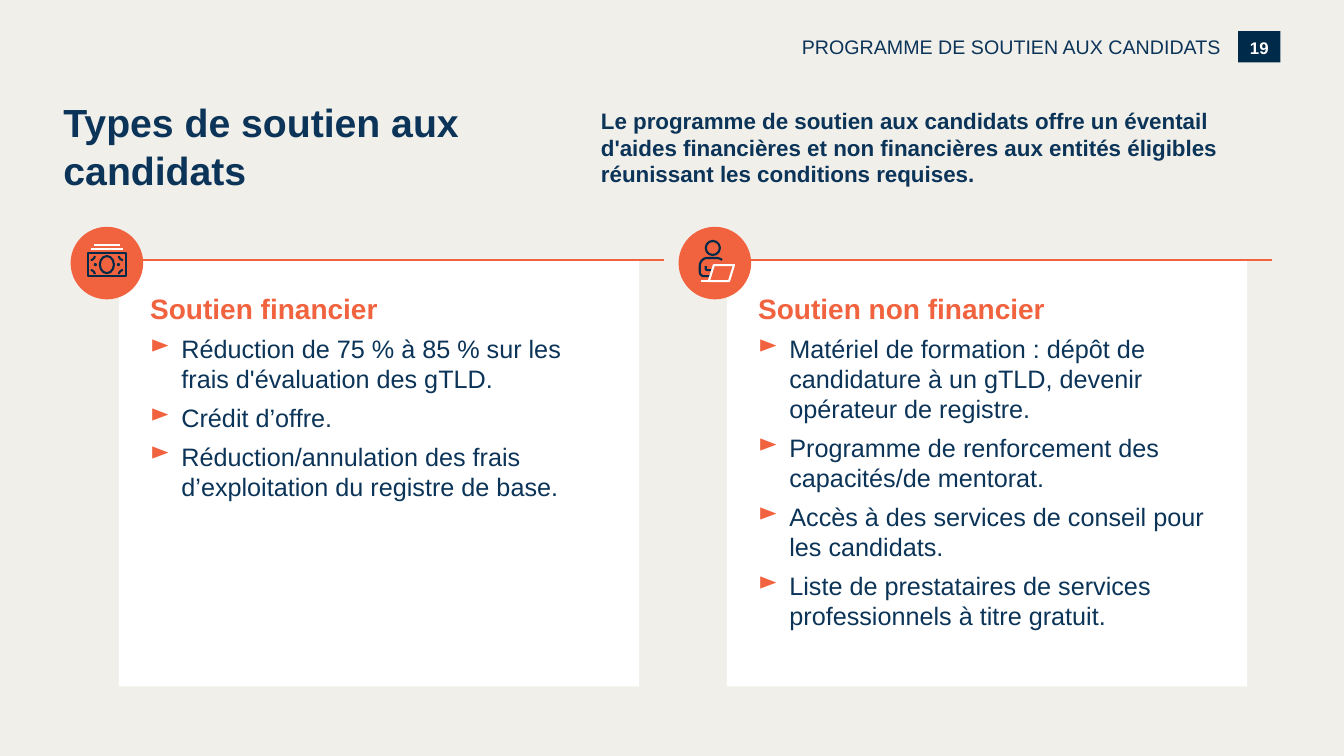
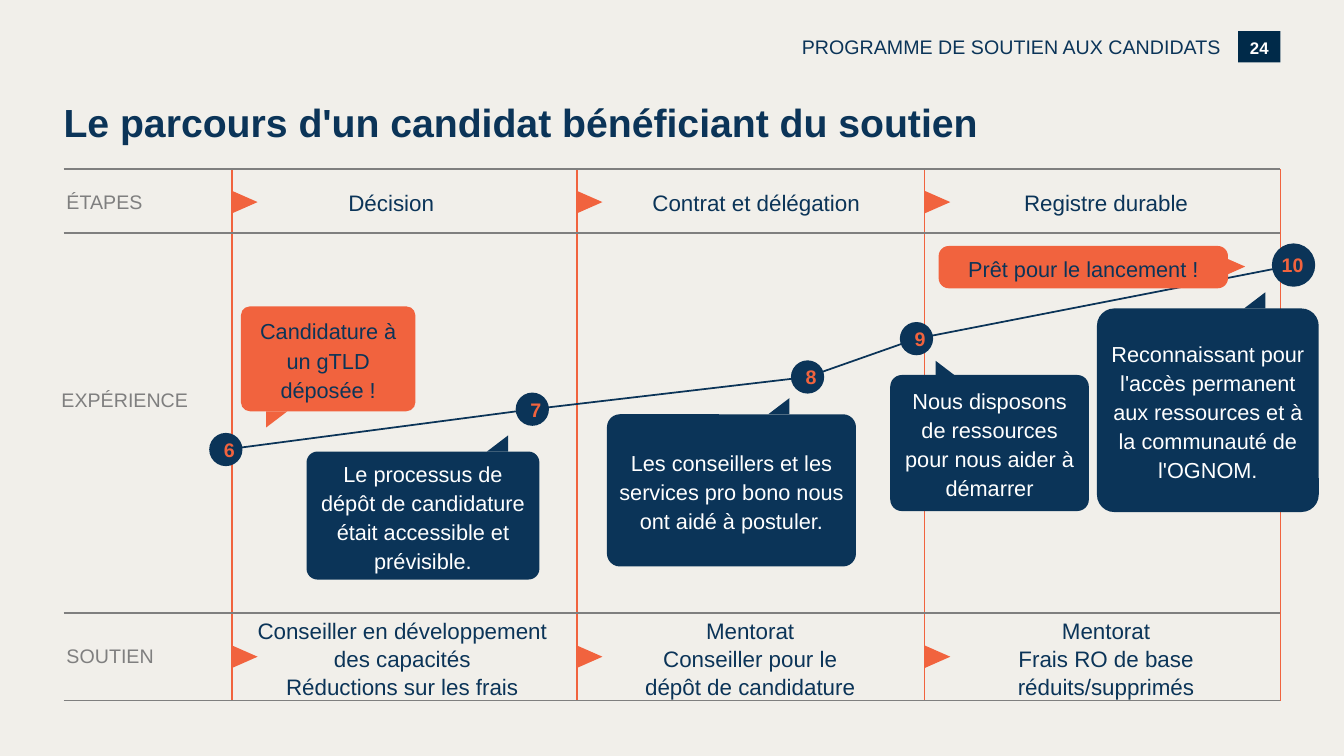
from lxml import etree
from pptx import Presentation
from pptx.dml.color import RGBColor
from pptx.enum.shapes import MSO_CONNECTOR, MSO_SHAPE
from pptx.enum.text import MSO_ANCHOR, PP_ALIGN
from pptx.oxml.ns import qn
from pptx.util import Pt

PX = 9144  # 100 px to the inch
FONT = "Arial"
SAND = RGBColor(0xF1, 0xEF, 0xEA)
NAVY = RGBColor(0x0B, 0x34, 0x58)
DEEP = RGBColor(0x00, 0x2A, 0x49)
ORANGE = RGBColor(0xF1, 0x63, 0x3E)
GREY = RGBColor(0x7F, 0x7F, 0x7F)
WHITE = RGBColor(0xFF, 0xFF, 0xFF)

RECT, ROUNDED, OVAL = MSO_SHAPE.RECTANGLE, MSO_SHAPE.ROUNDED_RECTANGLE, MSO_SHAPE.OVAL
ARROW, TAIL = MSO_SHAPE.ISOSCELES_TRIANGLE, MSO_SHAPE.RIGHT_TRIANGLE
LEFT, CENTER, RIGHT = PP_ALIGN.LEFT, PP_ALIGN.CENTER, PP_ALIGN.RIGHT
TOP, MIDDLE = MSO_ANCHOR.TOP, MSO_ANCHOR.MIDDLE
STRAIGHT = MSO_CONNECTOR.STRAIGHT

# ---- content ----
SECTION = "PROGRAMME DE SOUTIEN AUX CANDIDATS"
TYPES_TITLE = "Types de soutien aux candidats"
TYPES_INTRO = ("Le programme de soutien aux candidats offre un éventail d'aides financières "
               "et non financières aux entités éligibles réunissant les conditions requises.")
CARDS = [
    ("Soutien financier", [
        "Réduction de 75 % à 85 % sur les frais d'évaluation des gTLD.",
        "Crédit d’offre.",
        "Réduction/annulation des frais d’exploitation du registre de base."]),
    ("Soutien non financier", [
        "Matériel de formation : dépôt de candidature à un gTLD, devenir opérateur de registre.",
        "Programme de renforcement des capacités/de mentorat.",
        "Accès à des services de conseil pour les candidats.",
        "Liste de prestataires de services professionnels à titre gratuit."]),
]
JOURNEY_TITLE = "Le parcours d'un candidat bénéficiant du soutien"
ROW_LABELS = [("ÉTAPES", 66, 188), ("EXPÉRIENCE", 61, 385), ("SOUTIEN", 66, 639)]
STAGES = [  # stage, centre of its name, support, left and width of support
    ("Décision", 388, ["Conseiller en développement", "des capacités",
                       "Réductions sur les frais"], 226, 346),
    ("Contrat et délégation", 750, ["Mentorat", "Conseiller pour le",
                                    "dépôt de candidature"], 572, 344),
    ("Registre durable", 1097, ["Mentorat", "Frais RO de base réduits/supprimés"], 925, 344),
]
STEPS = [  # number, centre x, centre y, diameter, insets
    ("6", 224, 446, 33, (10, 5, 10, 5)), ("7", 528, 406, 33, (10, 5, 10, 5)),
    ("8", 801, 374, 33, (10, 5, 10, 5)), ("9", 909, 336, 33, (10, 5, 10, 5)),
    ("10", 1283, 263, 43, (0, 0, 2, 0)),
]
CALLOUTS = [  # text, box, fill, text colour, tail left and top, tail mirrored, tail rotation
    ("Candidature à un gTLD déposée !", (239, 304, 173, 104), ORANGE, NAVY,
     (264, 408), True, 180),
    ("Le processus de dépôt de candidature était accessible et prévisible.",
     (304, 448, 231, 127), NAVY, WHITE, (483, 432), True, 0),
    ("Les conseillers et les services pro bono nous ont aidé à postuler.",
     (602, 411, 247, 151), NAVY, WHITE, (762, 395), True, 0),
    ("Nous disposons de ressources pour nous aider à démarrer",
     (883, 372, 197, 135), NAVY, WHITE, (928, 358), False, 0),
    ("Reconnaissant pour l'accès permanent aux ressources et à la communauté de l'OGNOM.",
     (1088, 306, 220, 202), NAVY, WHITE, (1234, 290), True, 0),
]
LAUNCH = "Prêt pour le lancement !"

# ---- layout ----
MARGIN, RIGHT_EDGE = 63, 1270
CARD_LEFT, CARD_TOP, CARD_W, CARD_H, CARD_STEP = 118, 258, 516, 423, 603
COLUMN_EDGES = [230, 572, 917, RIGHT_EDGE]
ROW_EDGES = [168, 231, 608, 695]

# Icon outlines inside the 72 px badge: a pair is a corner, six numbers a Bézier curve
BODY = [(43, 33), (42, 32, 40, 31, 38, 31), (28, 31), (24, 31, 21, 35, 21, 39),
        (21, 45), (21, 47, 23, 49, 25, 49), (32, 49)]
ELBOW = [(33, 43), (28, 43), (27, 42), (27, 39)]
LAPTOP = [(35, 38), (30, 54), (50, 54), (55, 38)]


def emu(*lengths):
    return [round(length * PX) for length in lengths]


def shape(slide, kind, box, fill=None, line=None, rotation=0):
    item = slide.shapes.add_shape(kind, *emu(*box))
    paint(item, fill, line)
    item.rotation = rotation
    return item


def paint(item, fill, line):
    item.shadow.inherit = False
    if fill is None:
        item.fill.background()
    else:
        item.fill.solid()
        item.fill.fore_color.rgb = fill
    if line is None:
        item.line.fill.background()
    else:
        item.line.color.rgb = line
        item.line.width = Pt(1.5)


def rule(slide, x1, y1, x2, y2, color, width=1.25):
    line = slide.shapes.add_connector(STRAIGHT, *emu(x1, y1, x2, y2))
    line.line.color.rgb = color
    line.line.width = Pt(width)
    etree.SubElement(line._element.spPr, qn("a:effectLst"))


def style(paragraph, size, color, bold=False, align=LEFT, spacing=None):
    paragraph.alignment = align
    if spacing:
        paragraph.line_spacing = spacing
    font = paragraph.font
    font.name, font.size, font.bold = FONT, Pt(size), bold
    font.color.rgb = color


def write(item, lines, size, color, bold=False, align=LEFT, anchor=TOP,
          insets=(0, 0, 0, 0), spacing=None):
    frame = item.text_frame
    frame.word_wrap = True
    frame.vertical_anchor = anchor
    (frame.margin_left, frame.margin_top,
     frame.margin_right, frame.margin_bottom) = emu(*insets)
    for i, line in enumerate(lines):
        paragraph = frame.paragraphs[0] if i == 0 else frame.add_paragraph()
        paragraph.text = line
        style(paragraph, size, color, bold, align, spacing)


def label(slide, box, lines, size, color, **options):
    write(slide.shapes.add_textbox(*emu(*box)), lines, size, color, **options)


def add_bullet(frame, text):
    paragraph = frame.add_paragraph()
    paragraph.text = text
    paragraph.space_before = Pt(6)
    props = paragraph._p.get_or_add_pPr()
    props.set("marL", str(31 * PX))
    props.set("indent", str(-35 * PX))
    color = etree.SubElement(props, qn("a:buClr"))
    etree.SubElement(color, qn("a:srgbClr")).set("val", str(ORANGE))
    etree.SubElement(props, qn("a:buChar")).set("char", "►")
    style(paragraph, 18, NAVY)


def outline(slide, x, y, path, color, close=False):
    """Stroke a path of corners and Bézier curves, offset by x and y."""
    points = [path[0]]
    for part in path[1:]:
        if len(part) == 2:
            points.append(part)
            continue
        ctrl = [points[-1], part[:2], part[2:4], part[4:]]
        for t in (k / 8 for k in range(1, 9)):
            weights = ((1 - t) ** 3, 3 * t * (1 - t) ** 2, 3 * t * t * (1 - t), t ** 3)
            points.append(tuple(sum(w * c[axis] for w, c in zip(weights, ctrl))
                                for axis in (0, 1)))
    points = [emu(x + px, y + py) for px, py in points]
    builder = slide.shapes.build_freeform(*points[0], scale=1.0)
    builder.add_line_segments(points[1:], close=close)
    paint(builder.convert_to_shape(), None, color)


def banknote_icon(slide, x, y):
    shape(slide, RECT, (x + 17, y + 26, 38, 23), line=DEEP)
    shape(slide, OVAL, (x + 29, y + 29, 14, 17), line=DEEP)
    for dot in (24, 47):
        shape(slide, OVAL, (x + dot, y + 37, 1, 1), line=DEEP)
    for sx in (-1, 1):
        for sy in (-1, 1):
            corner = [(16 * sx, 5 * sy), (14 * sx, 5 * sy, 12 * sx, 7 * sy, 12 * sx, 9 * sy)]
            outline(slide, x + 36, y + 38, corner, DEEP)
    rule(slide, x + 20, y + 22, x + 52, y + 22, WHITE, 1.5)
    rule(slide, x + 23, y + 18, x + 49, y + 18, WHITE, 1.5)


def adviser_icon(slide, x, y):
    shape(slide, OVAL, (x + 27, y + 14, 14, 14), line=DEEP)
    outline(slide, x, y, ELBOW, DEEP)
    outline(slide, x, y, BODY, DEEP)
    rule(slide, x + 22, y + 54, x + 30, y + 54, WHITE, 1.5)
    outline(slide, x, y, LAPTOP, WHITE, close=True)


def new_slide(deck, number, title, title_size):
    """Add a slide with the shared background, header and title."""
    slide = deck.slides.add_slide(deck.slide_layouts[6])
    slide.background.fill.solid()
    slide.background.fill.fore_color.rgb = SAND
    write(shape(slide, RECT, (1228, 31, 42, 31), DEEP), [number], 12, WHITE,
          bold=True, align=CENTER, anchor=MIDDLE, spacing=1.08)
    label(slide, (728, 35, 483, 24), [SECTION], 14, NAVY, align=RIGHT)
    label(slide, (MARGIN, 98, *title_size), [title], 28, NAVY, bold=True)
    return slide


def build_types(deck):
    slide = new_slide(deck, "19", TYPES_TITLE, (516, 92))
    label(slide, (596, 106, 659, 81), [TYPES_INTRO], 16, NAVY, bold=True)
    icons = (banknote_icon, adviser_icon)
    for i, ((heading, points), icon) in enumerate(zip(CARDS, icons)):
        x = CARD_LEFT + i * CARD_STEP
        card = shape(slide, RECT, (x, CARD_TOP, CARD_W, CARD_H), WHITE)
        write(card, [heading], 20, ORANGE, bold=True, insets=(31, 31, 31, 31))
        for point in points:
            add_bullet(card.text_frame, point)
        rule(slide, x, CARD_TOP, x + 541, CARD_TOP, ORANGE)
        badge_x, badge_y = x - 48, CARD_TOP - 33
        shape(slide, OVAL, (badge_x, badge_y, 72, 72), ORANGE)
        icon(slide, badge_x, badge_y)


def callout(slide, text, box, fill, color, radius):
    bubble = shape(slide, ROUNDED, box, fill)
    bubble.adjustments[0] = radius
    write(bubble, [text], 15.5, color, align=CENTER, anchor=MIDDLE,
          insets=(8, 4, 8, 4), spacing=1.12)


def build_journey(deck):
    slide = new_slide(deck, "24", JOURNEY_TITLE, (988, 58))
    for x in COLUMN_EDGES:
        rule(slide, x, ROW_EDGES[0], x, ROW_EDGES[-1], ORANGE)
    for y in ROW_EDGES:
        rule(slide, MARGIN, y, RIGHT_EDGE, y, GREY)
    for text, x, y in ROW_LABELS:
        label(slide, (x, y, 164, 24), [text], 14, GREY)

    for edge, (stage, middle, support, left, width) in zip(COLUMN_EDGES, STAGES):
        label(slide, (middle - 161, 177, 322, 46), [stage], 16, NAVY,
              align=CENTER, anchor=MIDDLE, spacing=1.06)
        label(slide, (left, 614, width, 77), support, 16, NAVY,
              align=CENTER, anchor=MIDDLE, insets=(10, 0, 10, 0), spacing=1.06)
        for y in (188, 639):
            shape(slide, ARROW, (edge + 2, y, 22, 25), ORANGE, rotation=90)

    for (_, x1, y1, *_), (_, x2, y2, *_) in zip(STEPS, STEPS[1:]):
        rule(slide, x1, y1, x2, y2, NAVY)
    for number, x, y, size, insets in STEPS:
        circle = shape(slide, OVAL, (x - size / 2, y - size / 2, size, size), NAVY)
        write(circle, [number], 14, ORANGE, bold=True, align=CENTER, anchor=MIDDLE,
              insets=insets)

    for text, box, fill, color, tail_at, mirrored, rotation in CALLOUTS:
        callout(slide, text, box, fill, color, 0.085)
        tail = shape(slide, TAIL, (*tail_at, 21, 16), fill, rotation=rotation)
        if mirrored:
            tail._element.spPr.find(qn("a:xfrm")).set("flipH", "1")
    callout(slide, LAUNCH, (931, 244, 287, 42), ORANGE, NAVY, 0.24)
    shape(slide, ARROW, (1219, 256, 15, 17), ORANGE, rotation=90)


def main():
    deck = Presentation()
    deck.slide_width, deck.slide_height = emu(1333, 750)
    build_types(deck)
    build_journey(deck)
    deck.save("out.pptx")


if __name__ == "__main__":
    main()
